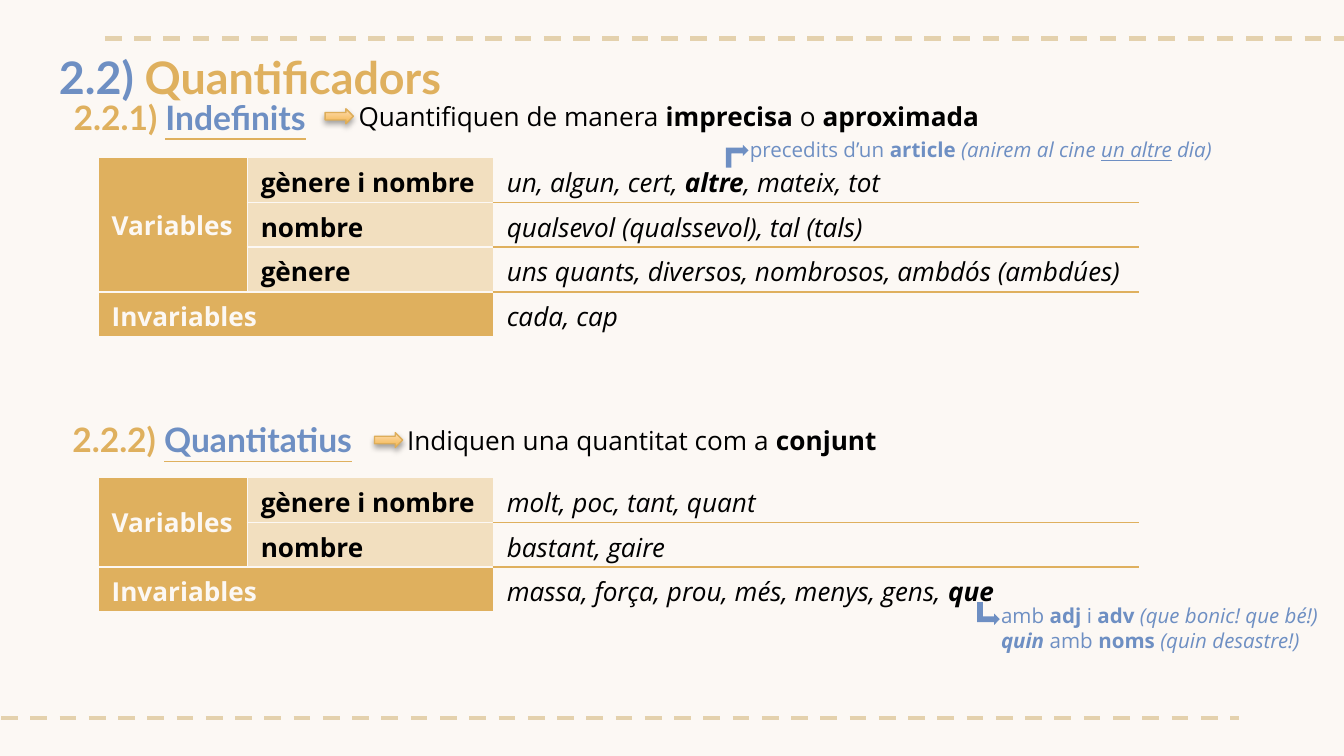
from dataclasses import dataclass, field

from lxml import etree
from pptx import Presentation
from pptx.dml.color import RGBColor
from pptx.enum.dml import MSO_LINE
from pptx.enum.shapes import MSO_CONNECTOR, MSO_SHAPE
from pptx.enum.text import MSO_ANCHOR
from pptx.oxml.ns import qn
from pptx.util import Pt

GOLD = RGBColor(0xDF, 0xB0, 0x5E)
BLUE = RGBColor(0x6E, 0x8F, 0xC3)
SAND = RGBColor(0xF2, 0xDF, 0xBF)
CREAM = RGBColor(0xFC, 0xF8, 0xF4)
DASH_TAN = RGBColor(0xE4, 0xD1, 0xAD)
ARROW_EDGE = RGBColor(0xDD, 0xAD, 0x59)
ARROW_DARK = RGBColor(0xF2, 0xB5, 0x4B)
ARROW_LIGHT = RGBColor(0xFF, 0xDE, 0xB5)
BLACK = RGBColor(0, 0, 0)

STRAIGHT = MSO_CONNECTOR.STRAIGHT
DASH = MSO_LINE.DASH
RIGHT_ARROW = MSO_SHAPE.RIGHT_ARROW
BENT_ARROW = MSO_SHAPE.BENT_UP_ARROW
MIDDLE = MSO_ANCHOR.MIDDLE
TOP = MSO_ANCHOR.TOP

BOLD = {"bold": True}
ITALIC = {"italic": True}
BOLD_ITALIC = BOLD | ITALIC
HEADING = {"name": "Lato", "bold": True}
BODY = {"name": "Open Sans", "size": Pt(14)}
NOTE = {"name": "Open Sans", "size": Pt(11)}

TABLE_LEFT = 52.6
COLUMN_WIDTHS = (79.9, 131.8, 345.6)
ROW_HEIGHT = 24


@dataclass
class Span:
    text: str
    color: RGBColor = BLACK
    style: dict = field(default_factory=dict)
    rule: RGBColor | None = None


@dataclass
class TextBlock:
    left: float
    top: float
    width: float
    height: float
    base: dict
    paras: list[list[Span]]


@dataclass
class Section:
    number: str
    name: str
    left: float
    top: float
    arrow_left: float
    arrow_top: float
    text_left: float
    text_top: float
    meaning: list[Span]
    table_top: float
    variables: list[tuple[str, list[Span]]]
    invariables: list[Span]


@dataclass
class NoteArrow:
    left: float
    top: float
    rotation: int
    flipped: bool


def add_spans(para, spans: list[Span], base: dict) -> None:
    for span in spans:
        run = para.add_run()
        run.text = span.text
        run.font.color.rgb = span.color
        if span.rule is not None:
            rule_fill = etree.SubElement(run.font._element, qn("a:uFill"))
            solid = etree.SubElement(rule_fill, qn("a:solidFill"))
            etree.SubElement(solid, qn("a:srgbClr"), val=str(span.rule))
        for key, value in (base | span.style).items():
            setattr(run.font, key, value)


def add_text(page, block: TextBlock) -> None:
    box = page.shapes.add_textbox(Pt(block.left), Pt(block.top), Pt(block.width), Pt(block.height))
    frame = box.text_frame
    layout = {"word_wrap": True, "vertical_anchor": TOP} | dict.fromkeys(
        ("margin_left", "margin_top", "margin_right", "margin_bottom"), Pt(7.2))
    for key, value in layout.items():
        setattr(frame, key, value)
    for index, spans in enumerate(block.paras):
        para = frame.add_paragraph() if index else frame.paragraphs[0]
        add_spans(para, spans, block.base)


def add_dashes(page, left: float, top: float) -> None:
    line = page.shapes.add_connector(STRAIGHT, Pt(left), Pt(top), Pt(left + 679), Pt(top))
    for key, value in {"width": Pt(2.25), "dash_style": DASH}.items():
        setattr(line.line, key, value)
    line.line.color.rgb = DASH_TAN
    etree.SubElement(line._element.spPr, qn("a:effectLst"))


def add_heading_arrow(page, left: float, top: float) -> None:
    arrow = page.shapes.add_shape(RIGHT_ARROW, Pt(left), Pt(top), Pt(15.1), Pt(8))
    arrow.fill.gradient()
    arrow.fill.gradient_angle = 90
    for stop, color in zip(arrow.fill.gradient_stops, (ARROW_DARK, ARROW_LIGHT)):
        stop.color.rgb = color
    arrow.line.color.rgb = ARROW_EDGE
    arrow.line.width = Pt(0.75)
    arrow.shadow.inherit = False
    effects = arrow._element.spPr.find(qn("a:effectLst"))
    shadow = etree.SubElement(effects, qn("a:outerShdw"), blurRad=str(Pt(3.1)),
                              dist=str(Pt(1.8)), dir="5400000", rotWithShape="0")
    tone = etree.SubElement(shadow, qn("a:srgbClr"), val=str(BLACK))
    etree.SubElement(tone, qn("a:alpha"), val="35000")


def add_note_arrow(page, arrow: NoteArrow) -> None:
    shape = page.shapes.add_shape(BENT_ARROW, Pt(arrow.left), Pt(arrow.top), Pt(12.2), Pt(12.2))
    shape.rotation = arrow.rotation
    shape.fill.solid()
    shape.fill.fore_color.rgb = BLUE
    shape.line.fill.background()
    shape.shadow.inherit = False
    if arrow.flipped:
        shape._element.spPr.find(qn("a:xfrm")).set("flipV", "1")


def set_borders(cell, top: RGBColor, bottom: RGBColor) -> None:
    properties = cell._tc.get_or_add_tcPr()
    sides = {"a:lnL": CREAM, "a:lnR": CREAM, "a:lnT": top, "a:lnB": bottom}
    for index, (tag, color) in enumerate(sides.items()):
        edge = etree.Element(qn(tag), w=str(Pt(1)))
        solid = etree.SubElement(edge, qn("a:solidFill"))
        etree.SubElement(solid, qn("a:srgbClr"), val=str(color))
        properties.insert(index, edge)


def fill_cell(cell, spans: list[Span], fill: RGBColor | None) -> None:
    if fill is None:
        cell.fill.background()
    else:
        cell.fill.solid()
        cell.fill.fore_color.rgb = fill
    add_spans(cell.text_frame.paragraphs[0], spans, BODY)


def add_quantifier_table(page, section: Section) -> None:
    last = len(section.variables)
    frame = page.shapes.add_table(last + 1, 3, Pt(TABLE_LEFT), Pt(section.table_top),
                                  Pt(sum(COLUMN_WIDTHS)), Pt(ROW_HEIGHT * (last + 1)))
    table = frame.table
    for column, width in zip(table.columns, COLUMN_WIDTHS):
        column.width = Pt(width)
    for row in table.rows:
        row.height = Pt(ROW_HEIGHT)
    table.cell(0, 0).merge(table.cell(last - 1, 0))
    table.cell(last, 0).merge(table.cell(last, 1))
    fill_cell(table.cell(0, 0), [Span("Variables", CREAM, BOLD)], GOLD)
    table.cell(0, 0).vertical_anchor = MIDDLE
    fill_cell(table.cell(last, 0), [Span("Invariables", CREAM, BOLD)], GOLD)
    for row, (kind, words) in enumerate(section.variables):
        fill_cell(table.cell(row, 1), [Span(kind, BLACK, BOLD)], SAND)
        fill_cell(table.cell(row, 2), words, None)
    fill_cell(table.cell(last, 2), section.invariables, None)
    for row in range(last + 1):
        for column in range(2):
            set_borders(table.cell(row, column), CREAM, CREAM)
        set_borders(table.cell(row, 2), GOLD if row else CREAM, GOLD if row < last else CREAM)


def add_section(page, section: Section) -> None:
    heading = [Span(section.number, GOLD),
               Span(section.name, BLUE, {"underline": True}, GOLD)]
    add_text(page, TextBlock(section.left, section.top, 636.5, 27.4,
                             HEADING | {"size": Pt(18)}, [heading]))
    add_heading_arrow(page, section.arrow_left, section.arrow_top)
    add_text(page, TextBlock(section.text_left, section.text_top, 425.5, 31, BODY, [section.meaning]))
    add_quantifier_table(page, section)


TITLE = TextBlock(24.5, 19.4, 607, 38.9, HEADING | {"size": Pt(24)},
                  [[Span("2.2) ", BLUE), Span("Quantificadors", GOLD)]])
SECTIONS = [
    Section("2.2.1) ", "Indefinits", 32.4, 44.6, 174.2, 58.3, 185, 46.8,
            [Span("Quantifiquen de manera "), Span("imprecisa", style=BOLD), Span(" o "),
             Span("aproximada", style=BOLD)],
            84.4,
            [("gènere i nombre", [Span("un, algun, cert, ", style=ITALIC), Span("altre", style=BOLD_ITALIC),
                                  Span(", mateix, tot", style=ITALIC)]),
             ("nombre", [Span("qualsevol (qualssevol), tal (tals)", style=ITALIC)]),
             ("gènere", [Span("uns quants, diversos, nombrosos, ambdós (ambdúes)", style=ITALIC)])],
            [Span("cada, cap", style=ITALIC)]),
    Section("2.2.2) ", "Quantitatius", 31.7, 217.4, 200.6, 231.8, 211, 220.3,
            [Span("Indiquen una quantitat com a "), Span("conjunt", style=BOLD)],
            255.8,
            [("gènere i nombre", [Span("molt, poc, tant, quant", style=ITALIC)]),
             ("nombre", [Span("bastant, gaire", style=ITALIC)])],
            [Span("massa, força, prou, més, menys, gens, ", style=ITALIC), Span("que", style=BOLD_ITALIC)]),
]
NOTES = [
    (NoteArrow(388.8, 77.6, 270, True), TextBlock(394.6, 67, 263.5, 31, NOTE, [
        [Span("precedits d’un ", BLUE), Span("article ", BLUE, BOLD), Span("(anirem al cine ", BLUE, ITALIC),
         Span("un altre", BLUE, ITALIC | {"underline": True}), Span(" dia)", BLUE, ITALIC)]])),
    (NoteArrow(523.4, 322.6, 90, False), TextBlock(529.2, 316.1, 189.4, 31, NOTE, [
        [Span("amb ", BLUE), Span("adj ", BLUE, BOLD), Span("i ", BLUE), Span("adv ", BLUE, BOLD),
         Span("(que bonic! que bé!)", BLUE, ITALIC)],
        [Span("quin", BLUE, BOLD_ITALIC), Span(" amb ", BLUE), Span("noms ", BLUE, BOLD),
         Span("(quin desastre!)", BLUE, ITALIC)]])),
]


def main() -> None:
    deck = Presentation()
    deck.slide_width, deck.slide_height = Pt(720), Pt(405)
    page = deck.slides.add_slide(deck.slide_layouts[6])
    page.background.fill.solid()
    page.background.fill.fore_color.rgb = CREAM
    add_dashes(page, 56.2, 20.6)
    add_dashes(page, -15.1, 384.5)
    add_text(page, TITLE)
    for section in SECTIONS:
        add_section(page, section)
    for arrow, block in NOTES:
        add_note_arrow(page, arrow)
        add_text(page, block)
    deck.save("out.pptx")


if __name__ == "__main__":
    main()
